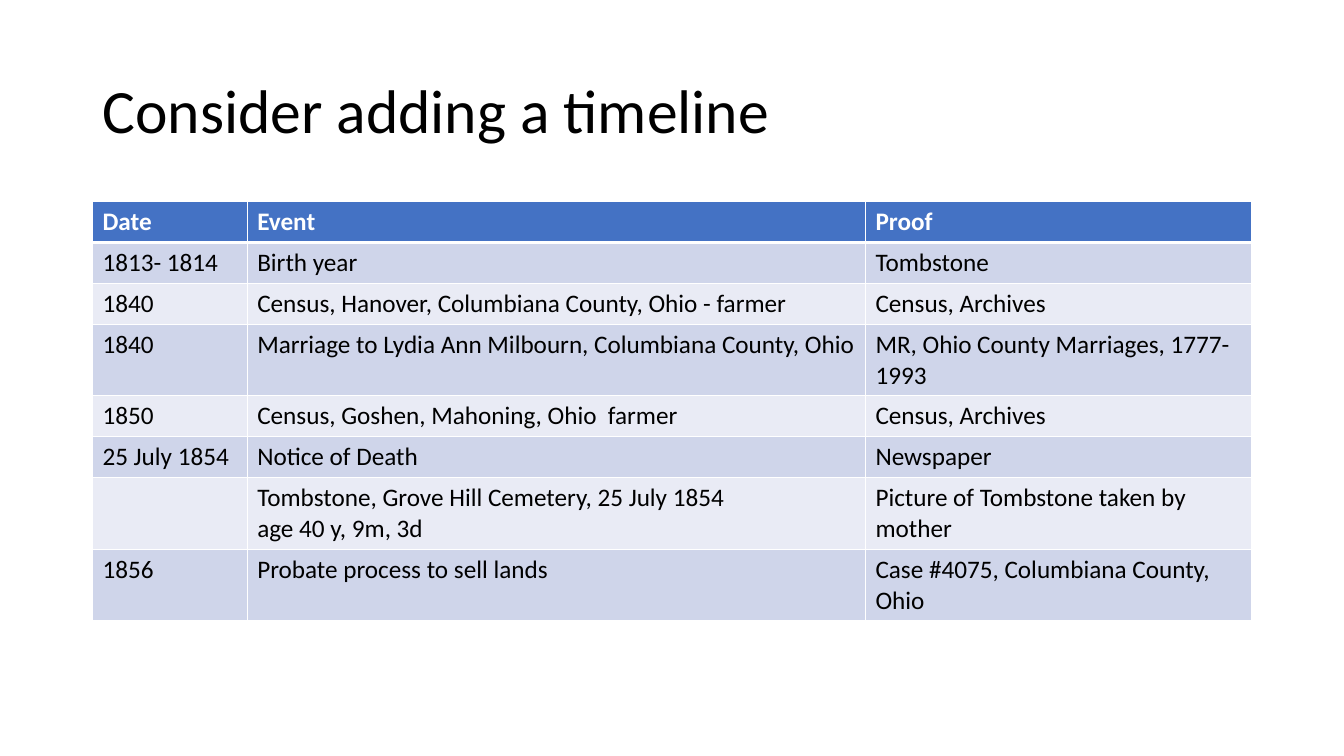
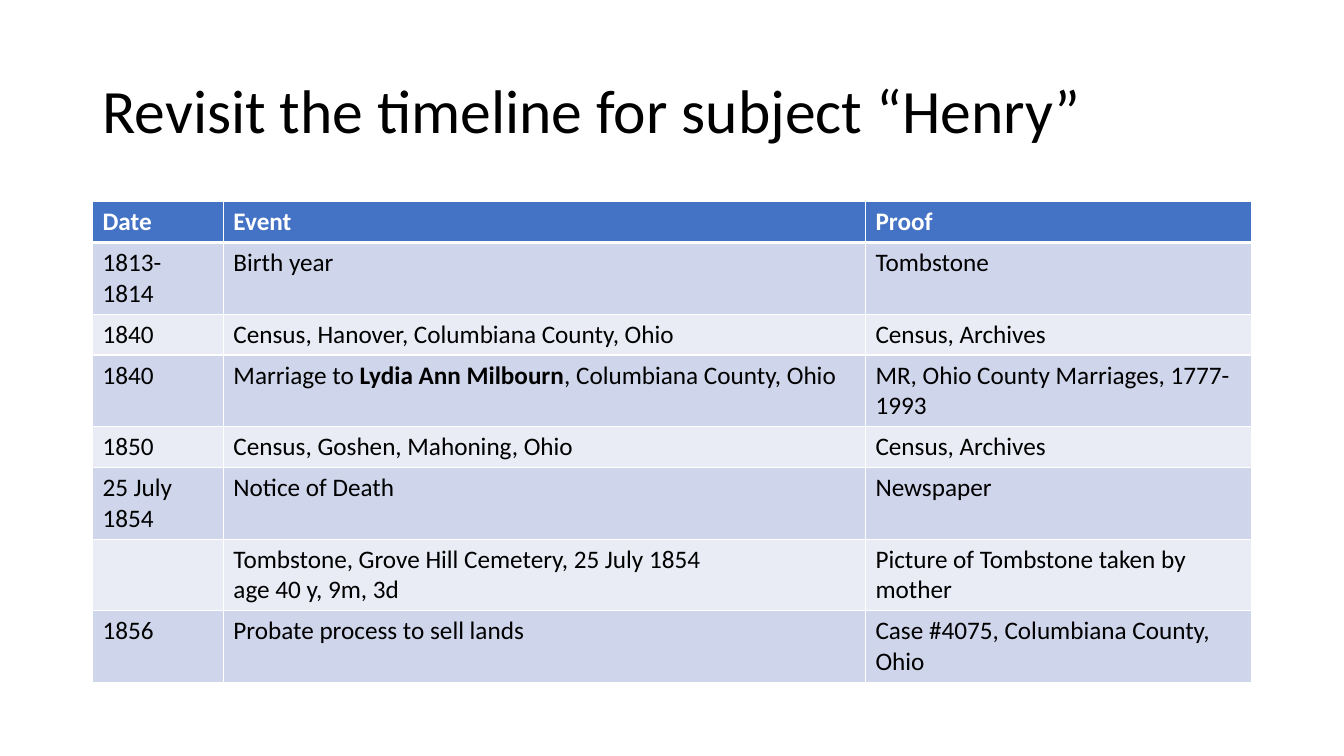
from dataclasses import dataclass

from lxml.etree import SubElement
from pptx import Presentation
from pptx.dml.color import RGBColor
from pptx.enum.text import MSO_ANCHOR, MSO_AUTO_SIZE, PP_ALIGN
from pptx.oxml.ns import qn
from pptx.util import Cm, Pt


# Shared look
@dataclass(frozen=True)
class Theme:
    font: str = "Calibri"
    title_size: int = 44
    table_size: int = 18
    text: str = "000000"
    white: str = "FFFFFF"
    header: str = "4472C4"
    bands: tuple = ("CFD5EA", "E9EBF5")
    border: int = 1
    header_border: int = 3


THEME = Theme()
SLIDE_SIZE = (Cm(33.87), Cm(19.05))
LEFT, WIDTH = Cm(2.33), Cm(29.21)
TITLE_TOP, TITLE_HEIGHT = Cm(1.01), Cm(3.68)
TABLE_TOP, ROW_HEIGHT = Cm(5.08), Cm(1.03)
PROOF_WIDTH = Cm(9.73)
BOLD_MARK = "**"


# Content: a line break starts a paragraph, ** surrounds bold words
def timeline(first_census, marriage, second_census):
    return [
        ("Date", "Event", "Proof"),
        ("1813- 1814", "Birth year", "Tombstone"),
        ("1840", first_census, "Census, Archives"),
        ("1840", marriage, "MR, Ohio County Marriages, 1777-1993"),
        ("1850", second_census, "Census, Archives"),
        ("25 July 1854", "Notice of Death", "Newspaper"),
        ("", "Tombstone, Grove Hill Cemetery, 25 July 1854\nage 40 y, 9m, 3d",
         "Picture of Tombstone taken by mother"),
        ("1856", "Probate process to sell lands",
         "Case #4075, Columbiana County, Ohio"),
    ]


SLIDES = [
    {
        "title": "Consider adding a timeline",
        "date_width": Cm(3.9),
        "rows": timeline(
            "Census, Hanover, Columbiana County, Ohio - farmer",
            "Marriage to Lydia Ann Milbourn, Columbiana County, Ohio",
            "Census, Goshen, Mahoning, Ohio  farmer",
        ),
    },
    {
        "title": "Revisit the timeline for subject “Henry”",
        "date_width": Cm(3.3),
        "rows": timeline(
            "Census, Hanover, Columbiana County, Ohio",
            "Marriage to **Lydia Ann Milbourn**, Columbiana County, Ohio",
            "Census, Goshen, Mahoning, Ohio",
        ),
    },
]


def add_run(paragraph, text, size, color, bold=False):
    run = paragraph.add_run()
    run.text = text
    run.font.name = THEME.font
    run.font.size = Pt(size)
    run.font.bold = bold
    run.font.color.rgb = RGBColor.from_string(color)


def set_borders(cell, top, bottom):
    properties = cell._tc.get_or_add_tcPr()
    widths = {"a:lnL": THEME.border, "a:lnR": THEME.border,
              "a:lnT": top, "a:lnB": bottom}
    for tag, width in widths.items():
        line = SubElement(properties, qn(tag), w=str(Pt(width)))
        fill = SubElement(line, qn("a:solidFill"))
        SubElement(fill, qn("a:srgbClr"), val=THEME.white)


def fill_cell(cell, text, row_index):
    is_header = row_index == 0
    # Borders come before the fill in the cell properties
    set_borders(
        cell,
        top=THEME.header_border if row_index == 1 else THEME.border,
        bottom=THEME.header_border if is_header else THEME.border,
    )
    background = THEME.header if is_header else THEME.bands[(row_index - 1) % 2]
    cell.fill.solid()
    cell.fill.fore_color.rgb = RGBColor.from_string(background)

    color = THEME.white if is_header else THEME.text
    frame = cell.text_frame
    for line_index, line in enumerate(text.split("\n")):
        paragraph = frame.add_paragraph() if line_index else frame.paragraphs[0]
        for part_index, part in enumerate(line.split(BOLD_MARK)):
            if part:
                add_run(paragraph, part, THEME.table_size, color,
                        bold=is_header or part_index % 2 == 1)


def set_title(slide, text):
    title = slide.shapes.title
    title.left, title.top = LEFT, TITLE_TOP
    title.width, title.height = WIDTH, TITLE_HEIGHT
    frame = title.text_frame
    frame.auto_size = MSO_AUTO_SIZE.NONE
    frame.vertical_anchor = MSO_ANCHOR.MIDDLE
    paragraph = frame.paragraphs[0]
    paragraph.alignment = PP_ALIGN.LEFT
    paragraph.line_spacing = 0.9
    add_run(paragraph, text, THEME.title_size, THEME.text)


def add_timeline(slide, rows, date_width):
    widths = (date_width, WIDTH - date_width - PROOF_WIDTH, PROOF_WIDTH)
    table = slide.shapes.add_table(
        len(rows), len(widths), LEFT, TABLE_TOP, WIDTH, ROW_HEIGHT * len(rows)
    ).table
    for column, width in zip(table.columns, widths):
        column.width = width
    for row_index, row in enumerate(rows):
        table.rows[row_index].height = ROW_HEIGHT
        for column_index, text in enumerate(row):
            fill_cell(table.cell(row_index, column_index), text, row_index)


def main():
    presentation = Presentation()
    presentation.slide_width, presentation.slide_height = SLIDE_SIZE
    title_only = presentation.slide_layouts.get_by_name("Title Only")
    for content in SLIDES:
        slide = presentation.slides.add_slide(title_only)
        set_title(slide, content["title"])
        add_timeline(slide, content["rows"], content["date_width"])
    presentation.save("out.pptx")


if __name__ == "__main__":
    main()
